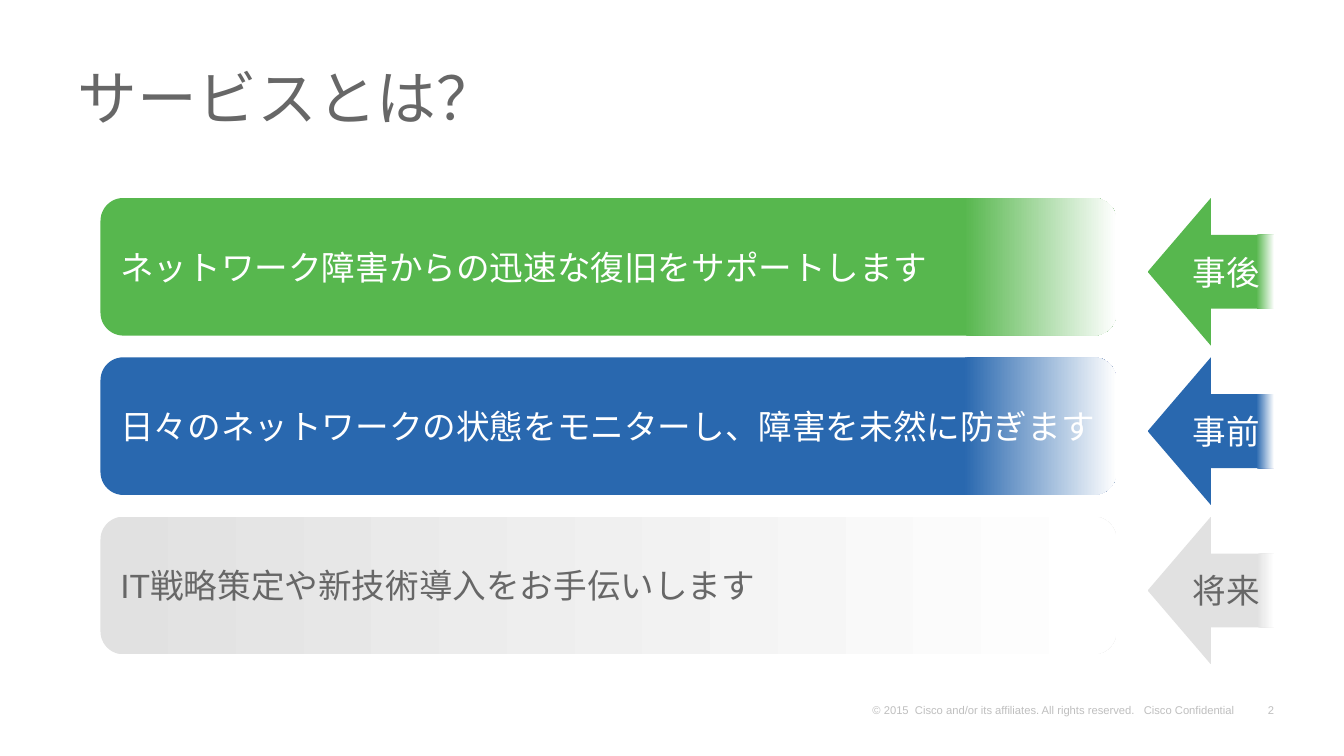
from pptx import Presentation
from pptx.dml.color import RGBColor
from pptx.enum.shapes import MSO_SHAPE as Shape
from pptx.enum.text import MSO_ANCHOR as Anchor, PP_ALIGN as Align
from pptx.util import Cm, Pt

WHITE, GRAY, PALE = "FFFFFF", "676767", "BFBFBF"
GREEN, BLUE, SILVER = "57B74E", "2968AF", "E1E1E1"


def color(hex_value):
    return RGBColor.from_string(hex_value)


class ServiceSlide:
    font_name = "Arial"

    def __init__(self, deck):
        self.slide = deck.slides.add_slide(deck.slide_layouts[5])

    def label(self, frame, text, size, ink, align=Align.LEFT, anchor=Anchor.MIDDLE):
        frame.text = text
        frame.vertical_anchor = anchor
        paragraph = frame.paragraphs[0]
        paragraph.alignment = align
        font = paragraph.runs[0].font
        font.name, font.size = self.font_name, Pt(size)
        font.color.rgb = color(ink)
        return paragraph

    def title(self, text, left, top, width, height):
        heading = self.slide.shapes.title
        heading.left, heading.top = Cm(left), Cm(top)
        heading.width, heading.height = Cm(width), Cm(height)
        self.label(heading.text_frame, text, 32, GRAY).line_spacing = 0.8

    def faded(self, kind, text, left, top, width, height, tint, fade_start, ink):
        block = self.slide.shapes.add_shape(
            kind, Cm(left), Cm(top), Cm(width), Cm(height))
        block.shadow.inherit = False
        block.line.fill.background()
        block.fill.gradient()
        block.fill.gradient_angle = 0
        stops = zip(block.fill.gradient_stops, (fade_start, 1), (tint, WHITE))
        for stop, position, shade in stops:
            stop.position = position
            stop.color.rgb = color(shade)
        self.label(block.text_frame, text, 18, ink)
        return block

    def bar(self, text, top, tint, fade_start, ink):
        self.faded(Shape.ROUNDED_RECTANGLE, text, 1.9, top, 19.2, 2.6,
                   tint, fade_start, ink)

    def arrow(self, text, top, tint, ink):
        marker = self.faded(Shape.LEFT_ARROW, text, 21.69, top, 2.39, 2.79,
                            tint, 0.86, ink)
        marker.text_frame.margin_right = 0

    def footer(self, text, left, width, align=Align.LEFT, wrap=True):
        note = self.slide.shapes.add_textbox(
            Cm(left), Cm(13.18), Cm(width), Cm(0.43))
        frame = note.text_frame
        frame.word_wrap = wrap
        frame.margin_left = frame.margin_right = Cm(0.18)
        frame.margin_top = frame.margin_bottom = Cm(0.08)
        self.label(frame, text, 6, PALE, align, Anchor.BOTTOM)


def main():
    deck = Presentation()
    deck.slide_width, deck.slide_height = Cm(25.4), Cm(14.28)
    page = ServiceSlide(deck)
    page.title("サービスとは？", 1.22, 0.94, 23.19, 2.03)

    services = [
        ("ネットワーク障害からの迅速な復旧をサポートします", "事後", GREEN, 0.85, WHITE),
        ("日々のネットワークの状態をモニターし、障害を未然に防ぎます", "事前", BLUE, 0.85, WHITE),
        ("IT戦略策定や新技術導入をお手伝いします", "将来", SILVER, 0, GRAY),
    ]
    for row, (service, phase, tint, fade_start, ink) in enumerate(services):
        top = 3.74 + row * 3.01
        page.bar(service, top, tint, fade_start, ink)
        page.arrow(phase, top, tint, ink)

    page.footer("© 2015  Cisco and/or its affiliates. All rights reserved."
                "   Cisco Confidential", 16.31, 7.39)
    page.footer("2", 23.65, 0.61, Align.RIGHT, wrap=False)
    deck.save("out.pptx")


if __name__ == "__main__":
    main()
